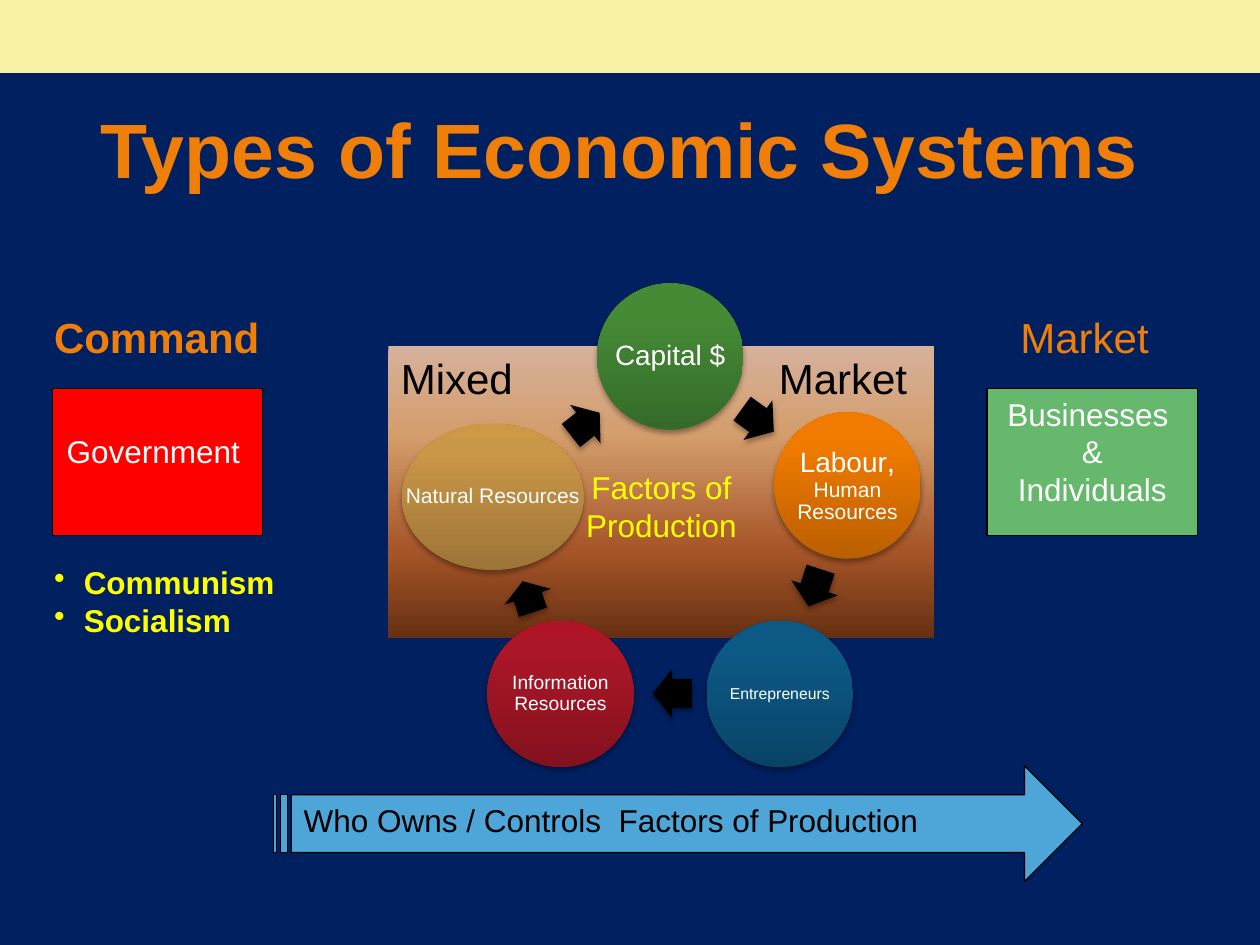
from math import cos, radians, sin

from pptx import Presentation
from pptx.dml.color import RGBColor
from pptx.enum.shapes import MSO_SHAPE
from pptx.enum.text import MSO_ANCHOR, PP_ALIGN
from pptx.oxml.ns import qn
from pptx.oxml.xmlchemy import OxmlElement
from pptx.util import Cm, Pt

NAVY = RGBColor(0x00, 0x20, 0x60)
CREAM = RGBColor(0xF9, 0xF1, 0xA3)
ORANGE = RGBColor(0xF0, 0x7F, 0x09)
YELLOW = RGBColor(0xFF, 0xFF, 0x00)
WHITE = RGBColor(0xFF, 0xFF, 0xFF)
BLACK = RGBColor(0x00, 0x00, 0x00)
RED = RGBColor(0xFF, 0x00, 0x00)
GREEN = RGBColor(0x66, 0xB8, 0x6C)
SKY = RGBColor(0x4E, 0xA5, 0xD8)

COPPER = [(0, "D6B19C"), (30, "D49E6C"), (70, "A65528"), (100, "663012")]
LEAF = [(0, "356B2A"), (80, "458B36"), (100, "458D35")]
AMBER = [(0, "BA5F00"), (80, "F17B00"), (100, "F27C00")]
TEAL = [(0, "094467"), (80, "0C5986"), (100, "0A5A89")]
WINE = [(0, "84111E"), (80, "AB1727"), (100, "AF1425")]
GOLD = [(0, "9C7437"), (80, "CA9647"), (100, "CE9845")]


def node(parent, tag, **attrs):
    """Append a DrawingML element."""
    child = OxmlElement(tag)
    for key, value in attrs.items():
        child.set(key, str(value))
    parent.append(child)
    return child


class Board:
    """Holds the style and the current slide."""

    font = "Arial"

    def __init__(self, slide):
        self.slide = slide

    def shape(self, kind, box, fill, line=None, angle=0, soft=False):
        item = self.slide.shapes.add_shape(kind, *map(Cm, box))
        item.shadow.inherit = False
        if isinstance(fill, list):
            self.blend(item, fill, angle)
        else:
            item.fill.solid()
            item.fill.fore_color.rgb = fill
        if line is None:
            item.line.fill.background()
        else:
            item.line.color.rgb = line
            item.line.width = Pt(0.75)
        if soft:
            self.shade(item)
        return item

    def blend(self, item, stops, angle):
        item.fill.gradient()
        item.fill.gradient_angle = angle
        holder = item.element.spPr.find(qn("a:gradFill")).find(qn("a:gsLst"))
        for old in list(holder):
            holder.remove(old)
        for place, color in stops:
            stop = node(holder, "a:gs", pos=place * 1000)
            node(stop, "a:srgbClr", val=color)

    def shade(self, item):
        effects = item.element.spPr.find(qn("a:effectLst"))
        outer = node(effects, "a:outerShdw", blurRad=Pt(3.1), dist=Pt(1.8),
                     dir=5400000, rotWithShape=0)
        color = node(outer, "a:srgbClr", val="000000")
        node(color, "a:alpha", val=35000)

    def label(self, item, lines, size, color, align=PP_ALIGN.LEFT, bold=False,
              anchor=MSO_ANCHOR.TOP, inset=None, top=None, space=None):
        frame = item.text_frame
        frame.word_wrap = True
        frame.vertical_anchor = anchor
        if inset is not None:
            frame.margin_left = frame.margin_right = Cm(inset)
            frame.margin_top = frame.margin_bottom = Cm(inset)
        if top is not None:
            frame.margin_top = Cm(top)
        for i, line in enumerate(lines):
            par = frame.add_paragraph() if i else frame.paragraphs[0]
            par.alignment = align
            par.font.name = self.font
            par.font.size = Pt(size)
            par.font.bold = bold
            par.font.color.rgb = color
            if space:
                par.line_spacing = space
            # A line is plain text or a list of (text, size) runs
            for text, points in [(line, None)] if isinstance(line, str) else line:
                run = par.add_run()
                run.text = text
                if points:
                    run.font.size = Pt(points)
        return frame

    def text(self, box, lines, size, color, **style):
        item = self.slide.shapes.add_textbox(*map(Cm, box))
        return self.label(item, lines, size, color, **style)

    def bullets(self, box, lines, size, color, **style):
        for par in self.text(box, lines, size, color, **style).paragraphs:
            props = par._p.get_or_add_pPr()
            props.set("marL", str(Cm(0.6)))
            props.set("indent", str(-Cm(0.6)))
            bullet = OxmlElement("a:buChar")
            bullet.set("char", "•")
            props.insert_element_before(bullet, "a:tabLst", "a:defRPr")

    def disc(self, x, y, wide, high, fill, line, size):
        box = (x - wide / 2, y - high / 2, wide, high)
        self.shape(MSO_SHAPE.OVAL, box, fill, angle=90, soft=True)
        self.text(box, [line], size, WHITE, align=PP_ALIGN.CENTER,
                  anchor=MSO_ANCHOR.MIDDLE, inset=0.05, space=0.9)

    def arrow(self, x, y, wide, turn):
        high = 0.99
        item = self.shape(MSO_SHAPE.RIGHT_ARROW,
                          (x - wide / 2, y - high / 2, wide, high),
                          BLACK, soft=True)
        item.adjustments[0] = 0.6
        item.adjustments[1] = 0.5
        item.rotation = turn


def main():
    deck = Presentation()
    deck.slide_width, deck.slide_height = Cm(25.4), Cm(19.05)
    slide = deck.slides.add_slide(deck.slide_layouts[6])
    slide.background.fill.solid()
    slide.background.fill.fore_color.rgb = NAVY
    board = Board(slide)
    mid = PP_ALIGN.CENTER

    # Top band and title
    board.shape(MSO_SHAPE.RECTANGLE, (0, 0, 25.4, 1.47), CREAM)
    board.text((1.7, 1.7, 21.59, 2.54), ["Types of Economic Systems"], 44, ORANGE,
               align=mid, bold=True, anchor=MSO_ANCHOR.MIDDLE)

    # Mixed panel, its two words set apart by a tab stop
    panel = board.shape(MSO_SHAPE.RECTANGLE, (7.83, 6.98, 11, 5.89), COPPER, angle=270)
    frame = board.label(panel, ["Mixed\tMarket"], 24, BLACK)
    stops = OxmlElement("a:tabLst")
    node(stops, "a:tab", pos=Cm(7.62), algn="l")
    frame.paragraphs[0]._p.get_or_add_pPr().insert_element_before(stops, "a:defRPr")
    board.text((11.43, 9.32, 3.81, 1.8), ["Factors of", "Production"], 18, YELLOW,
               align=mid)

    # Ownership arrow
    owner = board.shape(MSO_SHAPE.STRIPED_RIGHT_ARROW, (5.51, 15.44, 16.31, 2.33),
                        SKY, BLACK)
    board.label(owner, ["Who Owns / Controls  Factors of Production"], 18, BLACK)

    # Command side
    state = board.shape(MSO_SHAPE.RECTANGLE, (1.06, 7.83, 4.24, 2.96), RED, BLACK)
    board.label(state, ["Government "], 18, WHITE, align=mid, top=0.87)
    board.text((0.84, 6.15, 6.55, 1.3), ["Command"], 24, ORANGE, bold=True)
    board.bullets((0.84, 11.23, 6.55, 1.8), ["Communism", "Socialism"], 18, YELLOW,
                  bold=True)

    # Market side
    firms = board.shape(MSO_SHAPE.RECTANGLE, (19.9, 7.83, 4.24, 2.96), GREEN, BLACK)
    board.label(firms, ["Businesses ", "&", "Individuals"], 18, WHITE, align=mid)
    board.text((20.32, 6.15, 5.08, 1.3), ["Market"], 24, ORANGE)

    # Ring of factors, clockwise from the top: text, size, fill, width, drop
    ring = [
        ("Capital $", 16, LEAF, 2.95, 0),
        ([("Labour", 16), (", ", 17), ("Human Resources", 12)], 12, AMBER, 2.95, 0),
        ("Entrepreneurs", 9, TEAL, 2.95, 0),
        ("Information Resources", 11, WINE, 2.95, 0),
        ("Natural Resources", 12, GOLD, 3.66, 0.23),
    ]
    for i, (line, size, fill, wide, drop) in enumerate(ring):
        turn = radians(360 / len(ring) * i)
        board.disc(13.51 + 3.76 * sin(turn), 10.95 - 3.76 * cos(turn) + drop,
                   wide, 2.95, fill, line, size)

    # Arrows between the factors
    for x, y, wide, turn in [(15.28, 8.47, 0.79, 36), (16.42, 11.85, 0.79, 108),
                             (13.55, 13.98, 0.79, 180), (10.64, 12.03, 0.66, 251.3),
                             (11.8, 8.55, 0.74, 321.6)]:
        board.arrow(x, y, wide, turn)

    deck.save("out.pptx")


if __name__ == "__main__":
    main()
